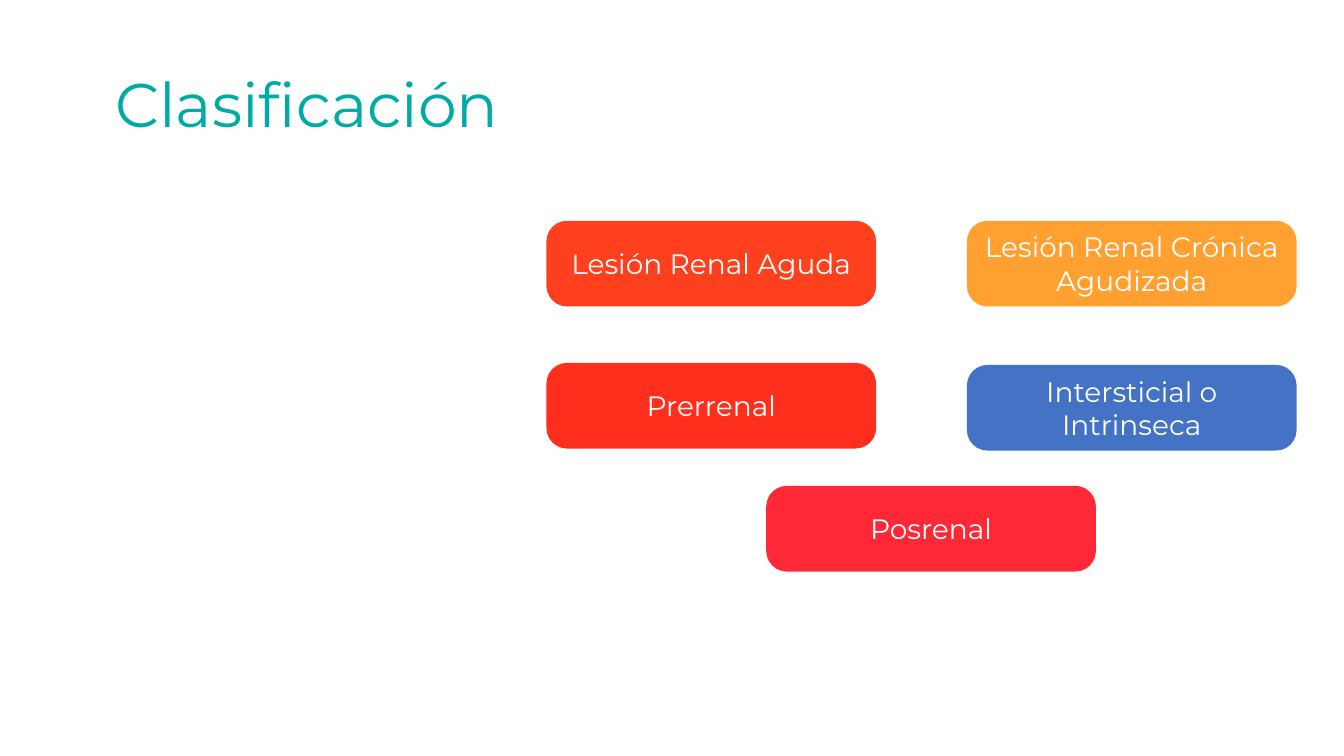
from pptx import Presentation
from pptx import util as u
from pptx.dml.color import RGBColor
from pptx.enum import shapes, text

TEAL = RGBColor(0x00, 0xAA, 0xA7)
WHITE = RGBColor(0xFF, 0xFF, 0xFF)
ORANGE_RED = RGBColor(0xFF, 0x40, 0x1F)
AMBER = RGBColor(0xFF, 0xA0, 0x31)
RED = RGBColor(0xFF, 0x2E, 0x1D)
BLUE = RGBColor(0x44, 0x72, 0xC4)
CRIMSON = RGBColor(0xFF, 0x28, 0x36)
FONT = "Montserrat"

LEFT, RIGHT, CENTRE = 5.42, 9.59, 7.6
BOX_WIDTH, BOX_HEIGHT = 3.27, 0.85

deck = Presentation()
deck.slide_width = u.Inches(13.33)
deck.slide_height = u.Inches(7.5)
page = deck.slides.add_slide(deck.slide_layouts[5])
page.background.fill.solid()
page.background.fill.fore_color.rgb = WHITE


def write(frame, words, size, colour):
    """Fill a text frame with one centred line of styled text."""
    frame.word_wrap = True
    frame.auto_size = text.MSO_AUTO_SIZE.NONE
    frame.vertical_anchor = text.MSO_ANCHOR.MIDDLE
    para = frame.paragraphs[0]
    para.alignment = text.PP_ALIGN.CENTER
    span = para.add_run()
    span.text = words
    span.font.name = FONT
    span.font.size = u.Pt(size)
    span.font.color.rgb = colour
    return para


title = page.shapes.title
title.left, title.top = u.Inches(0.9), u.Inches(0.34)
title.width, title.height = u.Inches(4.29), u.Inches(1.45)
write(title.text_frame, "Clasificación", 44, TEAL).line_spacing = 0.9

categories = [
    ("Lesión Renal Aguda", LEFT, 2.19, ORANGE_RED),
    ("Lesión Renal Crónica Agudizada", RIGHT, 2.19, AMBER),
    ("Prerrenal", LEFT, 3.6, RED),
    ("Intersticial o Intrinseca", RIGHT, 3.62, BLUE),
    ("Posrenal", CENTRE, 4.82, CRIMSON),
]
for words, left, top, colour in categories:
    box = page.shapes.add_shape(
        shapes.MSO_SHAPE.ROUNDED_RECTANGLE,
        u.Inches(left), u.Inches(top), u.Inches(BOX_WIDTH), u.Inches(BOX_HEIGHT))
    box.adjustments[0] = 0.24
    box.shadow.inherit = False
    box.fill.solid()
    box.fill.fore_color.rgb = colour
    box.line.fill.background()
    frame = box.text_frame
    frame.margin_left = frame.margin_right = u.Inches(0.06)
    frame.margin_top = frame.margin_bottom = u.Inches(0.06)
    write(frame, words, 20, WHITE)

deck.save("out.pptx")
